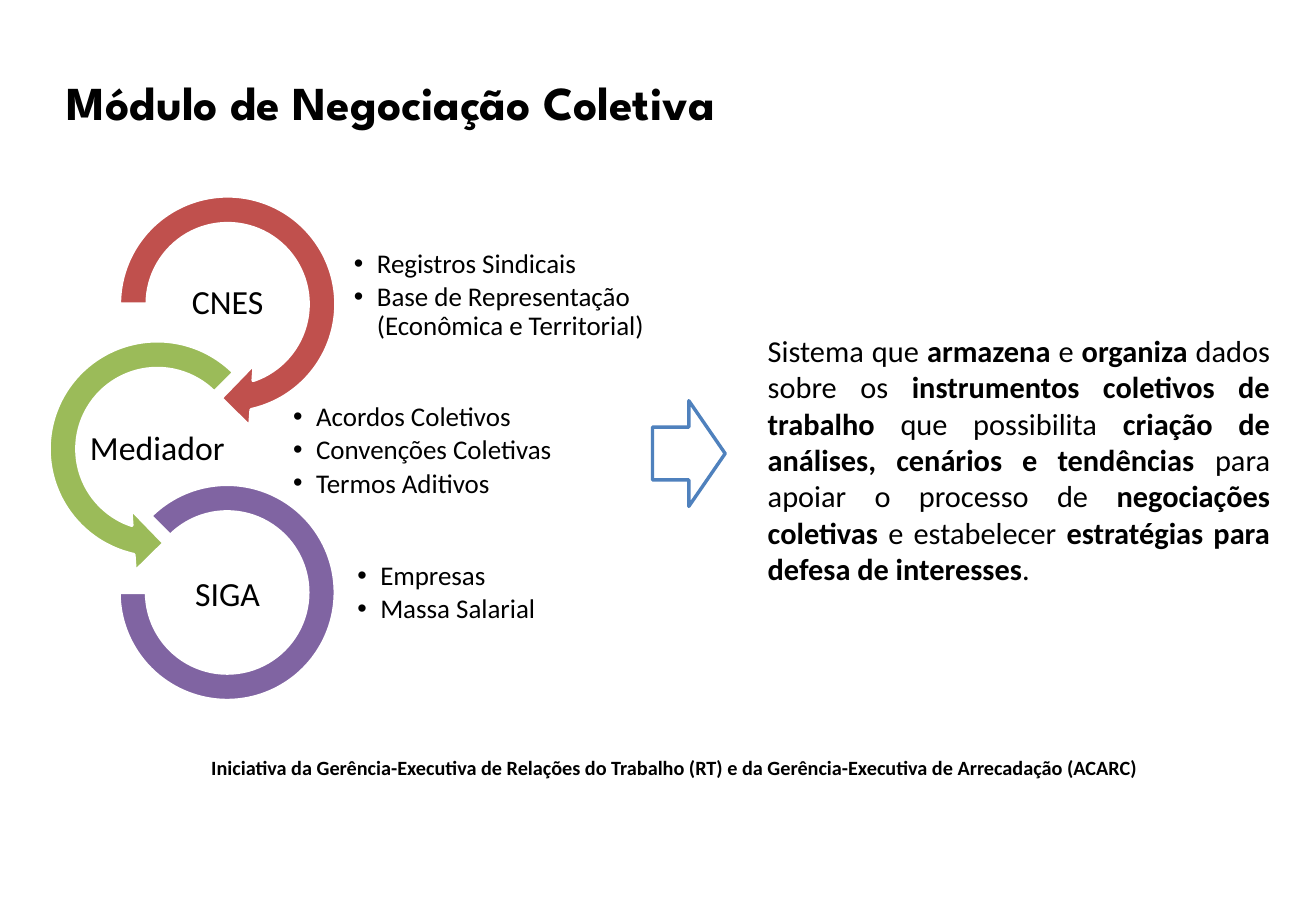
from lxml import etree
from pptx import Presentation
from pptx.dml.color import RGBColor
from pptx.enum.shapes import MSO_SHAPE as Shape
from pptx.enum.text import MSO_ANCHOR as Anchor, MSO_AUTO_SIZE as AutoSize, PP_ALIGN as Align
from pptx.oxml.ns import qn
from pptx.util import Cm, Pt

COLORS = {
    "black": "000000",
    "white": "FFFFFF",
    "red": "C0504D",
    "green": "9BBB59",
    "purple": "8064A2",
    "blue": "4F81BD",
}

MODULES = [
    {
        "name": "CNES",
        "label": (3.3, 5.62),
        "shape": Shape.CIRCULAR_ARROW,
        "box": (2.13, 3.73, 5.26, 5.26),
        "adjustments": (0.11, 11.42, 45, 108, 0.125),
        "color": "red",
        "items": ["Registros Sindicais", "Base de Representação\n(Econômica e Territorial)"],
        "items_box": (7.37, 5.13, 6.7, 2.11),
    },
    {
        "name": "Mediador",
        "label": (1.83, 8.66),
        "shape": Shape.LEFT_CIRCULAR_ARROW,
        "box": (0.66, 6.76, 5.26, 5.26),
        "adjustments": (0.11, 11.42, 63, 189, 0.125),
        "color": "green",
        "items": ["Acordos Coletivos", "Convenções Coletivas", "Termos Aditivos"],
        "items_box": (6.1, 8.38, 7.09, 2.11),
    },
    {
        "name": "SIGA",
        "label": (3.3, 11.71),
        "shape": Shape.BLOCK_ARC,
        "box": (2.49, 10.13, 4.52, 4.52),
        "adjustments": (135, 108, 0.127),
        "color": "purple",
        "items": ["Empresas", "Massa Salarial"],
        "items_box": (7.44, 11.35, 5.51, 2.11),
    },
]

DESCRIPTION = [
    ("Sistema que ", False),
    ("armazena ", True),
    ("e ", False),
    ("organiza ", True),
    ("dados sobre os ", False),
    ("instrumentos coletivos de trabalho ", True),
    ("que possibilita ", False),
    ("criação de análises, cenários e tendências ", True),
    ("para apoiar o processo de ", False),
    ("negociações coletivas ", True),
    ("e estabelecer ", False),
    ("estratégias para defesa de interesses", True),
    (".", False),
]

INITIATIVE = (
    "Iniciativa da Gerência-Executiva de Relações do Trabalho (RT) "
    "e da Gerência-Executiva de Arrecadação (ACARC)"
)


def rgb(name):
    return RGBColor.from_string(COLORS[name])


def lengths(box):
    return [Cm(value) for value in box]


def add_run(paragraph, text, size, bold=False, font="Calibri"):
    run = paragraph.add_run()
    run.text = text
    run.font.name = font
    run.font.size = Pt(size)
    run.font.bold = bold
    run.font.color.rgb = rgb("black")


def set_margins(frame, margin):
    frame.margin_left = frame.margin_right = Cm(margin)
    frame.margin_top = frame.margin_bottom = Cm(margin)


def add_text_frame(slide, box, margin=0.03, anchor=Anchor.MIDDLE):
    frame = slide.shapes.add_textbox(*lengths(box)).text_frame
    frame.word_wrap = True
    frame.vertical_anchor = anchor
    set_margins(frame, margin)
    return frame


def add_filled_shape(slide, kind, box, fill, line=None, adjustments=()):
    shape = slide.shapes.add_shape(kind, *lengths(box))
    shape.shadow.inherit = False
    shape.fill.solid()
    shape.fill.fore_color.rgb = rgb(fill)
    if line:
        shape.line.color.rgb = rgb(line)
        shape.line.width = Pt(2)
    else:
        shape.line.fill.background()
    for index, value in enumerate(adjustments):
        shape.adjustments[index] = value
    return shape


def add_bullets(slide, box, items):
    frame = add_text_frame(slide, box)
    for index, item in enumerate(items):
        paragraph = frame.add_paragraph() if index else frame.paragraphs[0]
        paragraph.level = 1
        paragraph.line_spacing = 0.9
        paragraph.space_after = Pt(2.4)
        properties = paragraph._p.get_or_add_pPr()
        properties.set("marL", str(Cm(0.48)))
        properties.set("indent", str(-Cm(0.48)))
        etree.SubElement(properties, qn("a:buFont")).set("typeface", "Arial")
        etree.SubElement(properties, qn("a:buChar")).set("char", "•")
        for number, line in enumerate(item.split("\n")):
            if number:
                paragraph.add_line_break()
            add_run(paragraph, line, 16)


def add_label(slide, position, text):
    paragraph = add_text_frame(slide, (*position, 2.92, 1.47)).paragraphs[0]
    paragraph.alignment = Align.CENTER
    paragraph.line_spacing = 0.9
    add_run(paragraph, text, 20)


def add_module(slide, module):
    add_filled_shape(slide, module["shape"], module["box"], module["color"],
                     "white", module["adjustments"])
    add_bullets(slide, module["items_box"], module["items"])
    add_label(slide, module["label"], module["name"])


def set_title(slide, text):
    title = slide.shapes.title
    title.left, title.top, title.width, title.height = lengths((1.4, 1.52, 24.56, 1.19))
    frame = title.text_frame
    frame.auto_size = AutoSize.NONE
    frame.vertical_anchor = Anchor.MIDDLE
    set_margins(frame, 0)
    paragraph = frame.paragraphs[0]
    paragraph.alignment = Align.LEFT
    add_run(paragraph, text, 28, True, "League Spartan")


def add_initiative(slide):
    band = add_filled_shape(slide, Shape.ROUNDED_RECTANGLE, (1.42, 15.52, 25.37, 0.97), "white")
    band.text_frame.word_wrap = True
    paragraph = band.text_frame.paragraphs[0]
    paragraph.alignment = Align.CENTER
    paragraph.line_spacing = 1.2
    add_run(paragraph, INITIATIVE, 12, True)


def add_description(slide):
    frame = add_text_frame(slide, (15.8, 6.81, 11, 5.64), 0.13, Anchor.TOP)
    frame.margin_left = frame.margin_right = Cm(0.25)
    paragraph = frame.paragraphs[0]
    paragraph.alignment = Align.JUSTIFY
    for text, bold in DESCRIPTION:
        add_run(paragraph, text, 18, bold)


def main():
    presentation = Presentation()
    presentation.slide_width = Cm(27.51)
    presentation.slide_height = Cm(19.05)
    slide = presentation.slides.add_slide(presentation.slide_layouts[5])
    set_title(slide, "Módulo de Negociação Coletiva")
    for module in MODULES:
        add_module(slide, module)
    add_initiative(slide)
    add_filled_shape(slide, Shape.RIGHT_ARROW, (13.64, 8.38, 1.52, 2.21), "white", "blue")
    add_description(slide)
    presentation.save("out.pptx")


if __name__ == "__main__":
    main()
